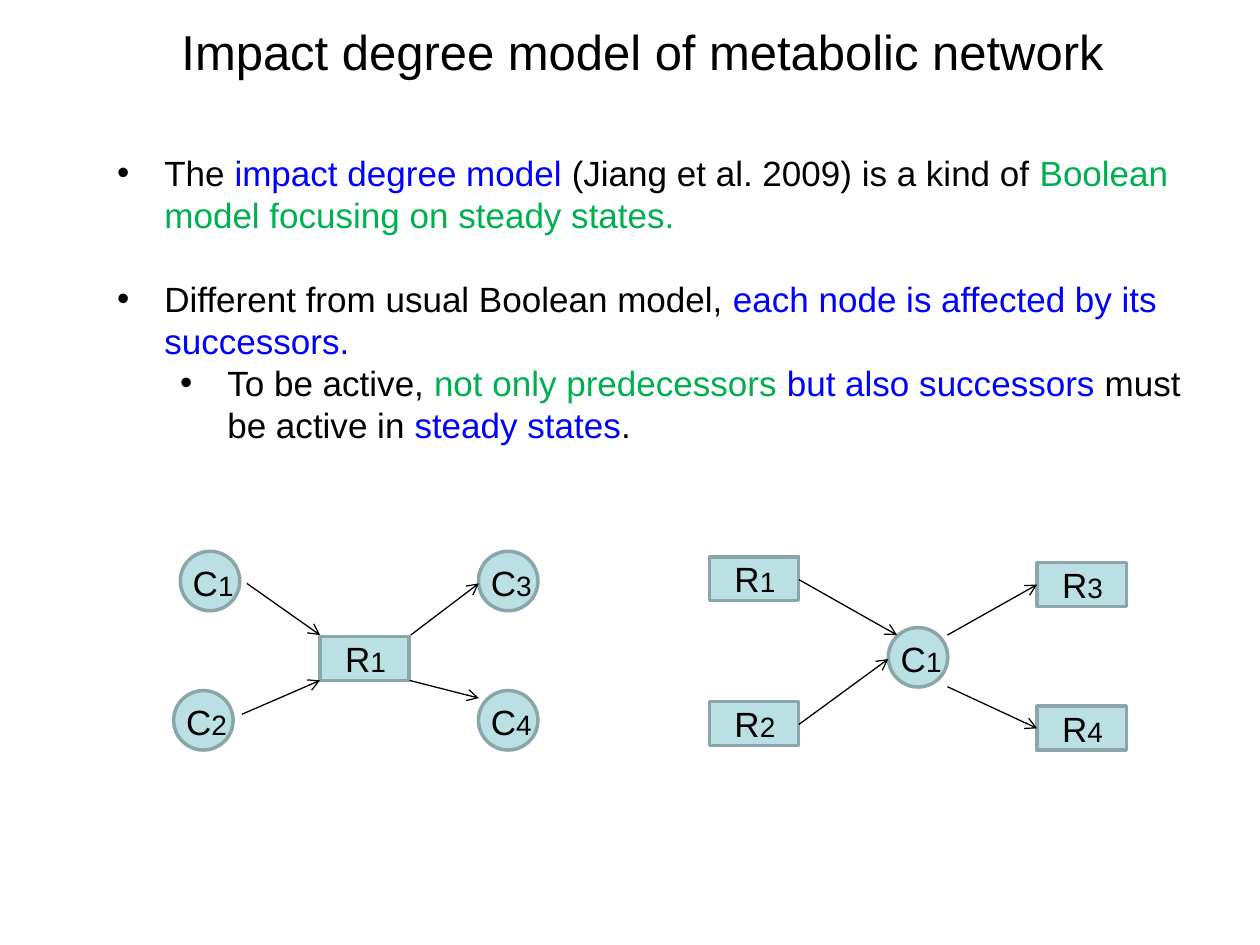
from lxml import etree
from pptx import Presentation
from pptx.dml.color import RGBColor
from pptx.enum.shapes import MSO_CONNECTOR, MSO_SHAPE
from pptx.enum.text import MSO_ANCHOR, PP_ALIGN
from pptx.oxml.ns import qn
from pptx.util import Pt

BLACK = RGBColor(0x00, 0x00, 0x00)
BLUE = RGBColor(0x00, 0x00, 0xFF)
GREEN = RGBColor(0x00, 0xB0, 0x50)
NODE_FILL = RGBColor(0xBB, 0xE0, 0xE3)
NODE_LINE = RGBColor(0x8A, 0xA6, 0xA8)

deck = Presentation()
deck.slide_width, deck.slide_height = Pt(720), Pt(540)
page = deck.slides.add_slide(deck.slide_layouts[6])


def add_text_box(left, top, width, height, wrap=True):
    box = page.shapes.add_textbox(Pt(left), Pt(top), Pt(width), Pt(height))
    box.text_frame.word_wrap = wrap
    return box.text_frame


def add_span(paragraph, text, size, color=BLACK):
    span = paragraph.add_run()
    span.text = text
    for name, value in {"name": "Arial", "size": Pt(size)}.items():
        setattr(span.font, name, value)
    span.font.color.rgb = color


# Title
title = add_text_box(33.8, 11.5, 666.7, 34.6)
title.vertical_anchor = MSO_ANCHOR.MIDDLE
title.paragraphs[0].alignment = PP_ALIGN.CENTER
add_span(title.paragraphs[0], "Impact degree model of metabolic network", 28)

# Bulleted text: level, left indent, space before, coloured spans
bullets = [
    (0, 27, 0, [("The ", BLACK), ("impact degree model ", BLUE),
                ("(Jiang et al. 2009) is a kind of ", BLACK),
                ("Boolean model focusing on steady states.", GREEN)]),
    (0, 27, 24, [("Different from usual Boolean model, ", BLACK),
                 ("each node is affected by its successors.", BLUE)]),
    (1, 63, 0, [("To be active, ", BLACK), ("not only predecessors ", GREEN),
                ("but also successors ", BLUE), ("must be active in ", BLACK),
                ("steady states", BLUE), (".", BLACK)]),
]
body = add_text_box(59.8, 82.8, 641.5, 200.9)
for index, (level, indent, gap, spans) in enumerate(bullets):
    paragraph = body.add_paragraph() if index else body.paragraphs[0]
    layout = {"level": level, "line_spacing": Pt(24), "space_before": Pt(gap)}
    for name, value in layout.items():
        setattr(paragraph, name, value)
    properties = paragraph._p.get_or_add_pPr()
    properties.set("marL", str(Pt(indent)))
    properties.set("indent", str(Pt(-27)))
    etree.SubElement(properties, qn("a:buFont")).set("typeface", "Arial")
    etree.SubElement(properties, qn("a:buChar")).set("char", "•")
    for text, color in spans:
        add_span(paragraph, text, 20, color)

# Compounds (C) are circles, reactions (R) are rectangles:
# shape, width, height, label offset across and down
node_styles = {
    "C": (MSO_SHAPE.OVAL, 34, 34, 0, 2.4),
    "R": (MSO_SHAPE.RECTANGLE, 51, 25, 7.2, -3),
}
nodes = [
    ("C1", 507.6, 358.6), ("R1", 405.4, 318.2), ("R2", 405.4, 401),
    ("R3", 592.6, 321.5), ("R4", 592.6, 403.6),
    ("R1", 182.9, 363.8), ("C1", 103, 315), ("C2", 99.2, 394.6),
    ("C3", 273.4, 315), ("C4", 273.4, 394.6),
]
for (letter, number), left, top in nodes:
    kind, width, height, across, down = node_styles[letter]
    node = page.shapes.add_shape(kind, Pt(left), Pt(top), Pt(width), Pt(height))
    node.shadow.inherit = False
    node.fill.solid()
    node.fill.fore_color.rgb = NODE_FILL
    node.line.color.rgb = NODE_LINE
    node.line.width = Pt(2)
    label = add_text_box(left + across, top + down, 38, 31.7, wrap=False)
    add_span(label.paragraphs[0], letter, 20)
    add_span(label.paragraphs[0], number, 16)

# Arrows: start x, start y, end x, end y
arrows = [
    (456.5, 331.2, 512.6, 362.9), (456.5, 414, 507.6, 376.6),
    (592.6, 334.1, 592.6, 334.1), (541.4, 362.9, 592.6, 334.1),
    (541.4, 392.4, 592.6, 416.2),
    (141.1, 333.4, 182.9, 362.9), (234.7, 362.9, 273.6, 333.4),
    (138.2, 408.2, 182.9, 388.8), (234, 388.8, 273.6, 398.9),
]
for ends in arrows:
    arrow = page.shapes.add_connector(MSO_CONNECTOR.STRAIGHT, *map(Pt, ends))
    arrow.line.color.rgb = BLACK
    arrow.line.width = Pt(0.75)
    etree.SubElement(arrow.line._get_or_add_ln(), qn("a:tailEnd")).set("type", "arrow")
    etree.SubElement(arrow._element.spPr, qn("a:effectLst"))

deck.save("out.pptx")
